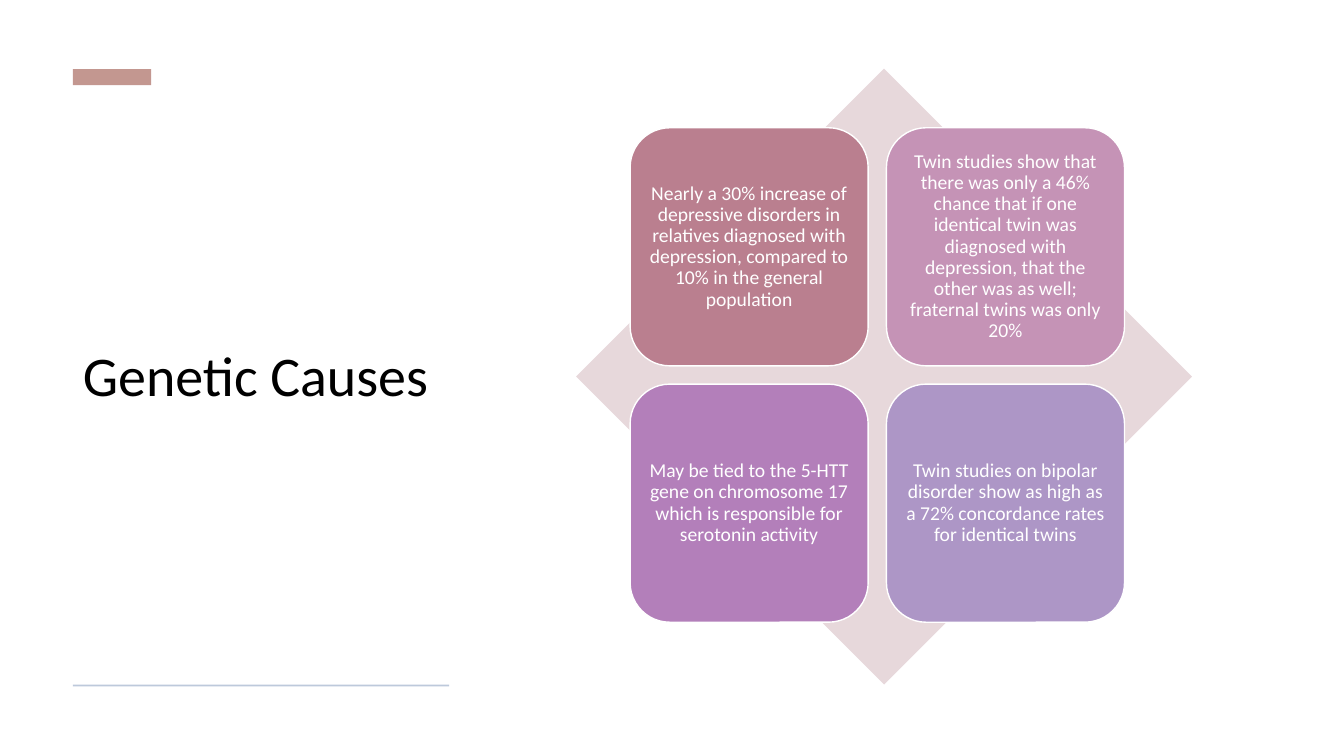
from pptx import Presentation
from pptx.dml.color import RGBColor
from pptx.enum.shapes import MSO_SHAPE
from pptx.enum.text import MSO_ANCHOR, MSO_AUTO_SIZE, PP_ALIGN
from pptx.util import Cm, Pt

RECTANGLE = MSO_SHAPE.RECTANGLE
DIAMOND = MSO_SHAPE.DIAMOND
ROUNDED = MSO_SHAPE.ROUNDED_RECTANGLE
MIDDLE = MSO_ANCHOR.MIDDLE
LEFT, CENTER = PP_ALIGN.LEFT, PP_ALIGN.CENTER
NO_AUTOFIT = MSO_AUTO_SIZE.NONE

BLACK = RGBColor(0x00, 0x00, 0x00)
WHITE = RGBColor(0xFF, 0xFF, 0xFF)
CLAY = RGBColor(0xC3, 0x97, 0x90)
PALE_BLUE = RGBColor(0xBD, 0xC9, 0xDB)
PALE_ROSE = RGBColor(0xE7, 0xD8, 0xDB)
ROSE = RGBColor(0xBA, 0x7F, 0x8F)
PINK = RGBColor(0xC5, 0x93, 0xB6)
PURPLE = RGBColor(0xB3, 0x7F, 0xBA)
LAVENDER = RGBColor(0xAD, 0x96, 0xC6)

FONT = "Calibri"
TILE_SIZE = 6
TILE_PITCH = 6.46
TILES_LEFT, TILES_TOP = 15.88, 3.2
TILES = [
    (ROSE, "Nearly a 30% increase of depressive disorders in relatives "
           "diagnosed with depression, compared to 10% in the general population"),
    (PINK, "Twin studies show that there was only a 46% chance that if one "
           "identical twin was diagnosed with depression, that the other was "
           "as well; fraternal twins was only 20%"),
    (PURPLE, "May be tied to the 5-HTT gene on chromosome 17 which is "
             "responsible for serotonin activity"),
    (LAVENDER, "Twin studies on bipolar disorder show as high as a 72% "
               "concordance rates for identical twins"),
]


def add_filled_shape(kind, left, top, width, height, color):
    shape = page.shapes.add_shape(kind, Cm(left), Cm(top), Cm(width), Cm(height))
    shape.shadow.inherit = False
    shape.fill.solid()
    shape.fill.fore_color.rgb = color
    shape.line.fill.background()
    return shape


def write_text(shape, text, *, size, color, align, inset):
    frame = shape.text_frame
    frame.word_wrap = True
    frame.auto_size = NO_AUTOFIT
    frame.vertical_anchor = MIDDLE
    frame.margin_left = frame.margin_right = Cm(inset)
    frame.margin_top = frame.margin_bottom = Cm(inset)
    para = frame.paragraphs[0]
    para.alignment = align
    para.line_spacing = 0.9
    span = para.add_run()
    span.text = text
    span.font.name = FONT
    span.font.size = Pt(size)
    span.font.color.rgb = color


deck = Presentation()
deck.slide_width, deck.slide_height = Cm(33.87), Cm(19.05)
page = deck.slides.add_slide(deck.slide_layouts[5])

title = page.shapes.title
title.left, title.top = Cm(1.84), Cm(2.67)
title.width, title.height = Cm(9.4), Cm(13.74)
write_text(title, "Genetic Causes", size=40, color=BLACK, align=LEFT, inset=0.25)

add_filled_shape(RECTANGLE, 1.84, 1.74, 1.97, 0.41, CLAY)
add_filled_shape(RECTANGLE, 1.84, 17.25, 9.48, 0.05, PALE_BLUE)
add_filled_shape(DIAMOND, 14.52, 1.73, 15.52, 15.52, PALE_ROSE)

for index, (color, text) in enumerate(TILES):
    row, column = divmod(index, 2)
    tile = add_filled_shape(ROUNDED, TILES_LEFT + column * TILE_PITCH,
                            TILES_TOP + row * TILE_PITCH + 0.02,
                            TILE_SIZE, TILE_SIZE, color)
    tile.line.color.rgb = WHITE
    tile.line.width = Pt(1)
    write_text(tile, text, size=14, color=WHITE, align=CENTER, inset=0.15)

deck.save("out.pptx")
